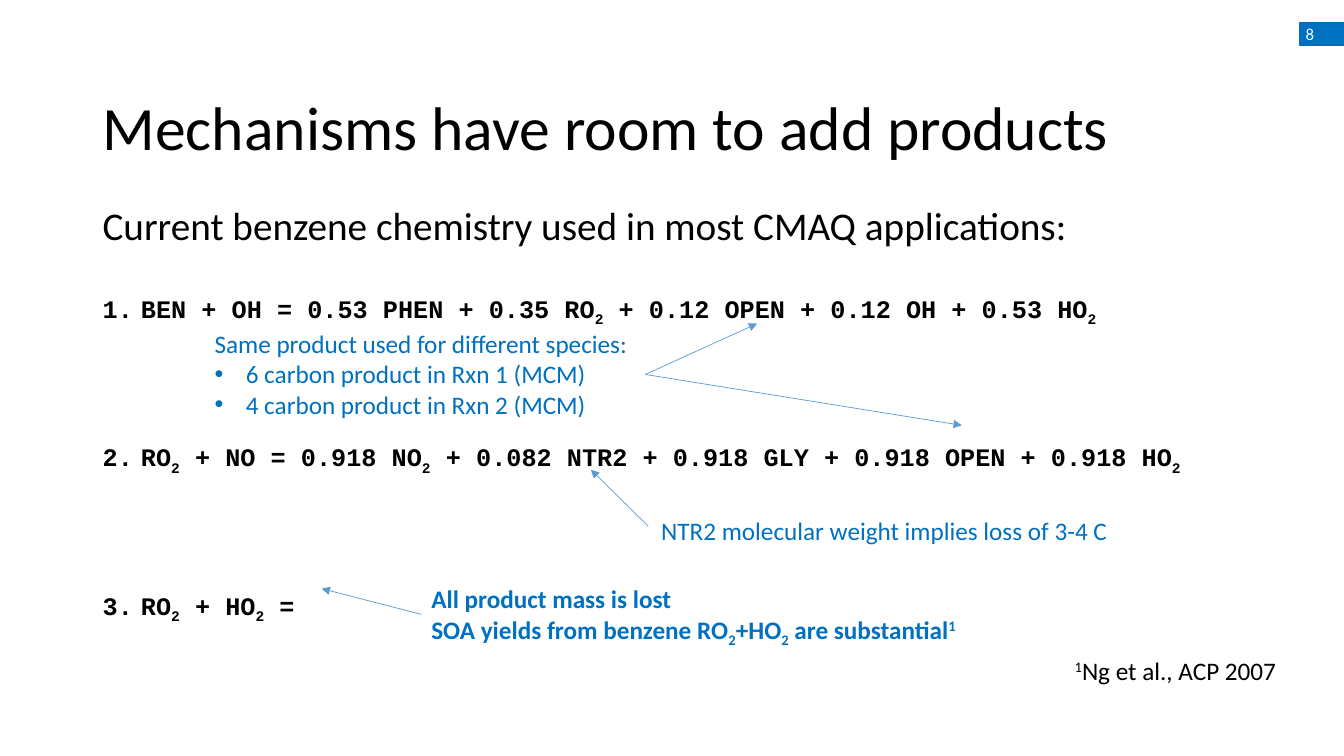
from dataclasses import dataclass

from lxml import etree
from pptx import Presentation
from pptx.dml.color import RGBColor
from pptx.enum.shapes import MSO_CONNECTOR, MSO_SHAPE
from pptx.enum.text import MSO_ANCHOR
from pptx.oxml.ns import qn
from pptx.util import Inches, Pt

RECTANGLE = MSO_SHAPE.RECTANGLE
STRAIGHT = MSO_CONNECTOR.STRAIGHT
TOP, MIDDLE = MSO_ANCHOR.TOP, MSO_ANCHOR.MIDDLE
LEFT_SIDE, RIGHT_SIDE = 1, 3
BLANK_LAYOUT = 6
BASELINES = {"_": "-25000", "^": "30000"}


@dataclass(frozen=True)
class Theme:
    """Fonts, type sizes and colours of the slide."""
    text_font: str = "Calibri"
    code_font: str = "Courier New"
    title_size: int = 44
    heading_size: int = 28
    text_size: int = 18
    number_size: int = 12
    black: RGBColor = RGBColor(0, 0, 0)
    white: RGBColor = RGBColor(255, 255, 255)
    blue: RGBColor = RGBColor(0x00, 0x70, 0xC0)
    arrow: RGBColor = RGBColor(0x5B, 0x9B, 0xD5)


THEME = Theme()
REACTIONS = (
    "BEN + OH = 0.53 PHEN + 0.35 RO|_2| + 0.12 OPEN + 0.12 OH + 0.53 HO|_2",
    "RO|_2| + NO = 0.918 NO|_2| + 0.082 NTR2 + 0.918 GLY + 0.918 OPEN + 0.918 HO|_2",
    "RO|_2| + HO|_2| =",
)


def write(paragraph, text, size=THEME.text_size, color=THEME.black,
          font=THEME.text_font, bold=False):
    """Write text split at bars, where _ marks a subscript and ^ a superscript."""
    for piece in text.split("|"):
        run = paragraph.add_run()
        baseline = BASELINES.get(piece[0])
        run.text = piece[1:] if baseline else piece
        run.font.name = font
        run.font.size = Pt(size)
        run.font.bold = bold
        run.font.color.rgb = color
        if baseline:
            run.font._element.set("baseline", baseline)


def add_marker(paragraph, tag, indent, **attributes):
    """Give a paragraph a hanging indent and a bullet or number."""
    properties = paragraph._p.get_or_add_pPr()
    properties.set("marL", str(Inches(indent)))
    properties.set("indent", str(-Inches(indent)))
    if tag == "a:buChar":
        etree.SubElement(properties, qn("a:buFont"), typeface="Arial")
    etree.SubElement(properties, qn(tag), **attributes)


def add_text_box(slide, box, anchor=TOP):
    """Add an empty wrapping text box at left, top, width, height."""
    shape = slide.shapes.add_textbox(*map(Inches, box))
    shape.text_frame.word_wrap = True
    shape.text_frame.vertical_anchor = anchor
    return shape


def add_page_number(slide, box, number):
    """Add the filled page number tag."""
    tag = slide.shapes.add_shape(RECTANGLE, *map(Inches, box))
    tag.shadow.inherit = False
    tag.fill.solid()
    tag.fill.fore_color.rgb = THEME.blue
    tag.line.color.rgb = THEME.blue
    tag.line.width = Pt(1)
    frame = tag.text_frame
    frame.margin_left = Inches(0.06)
    frame.margin_top = frame.margin_bottom = 0
    frame.vertical_anchor = MIDDLE
    paragraph = frame.paragraphs[0]
    paragraph.alignment = 1
    write(paragraph, number, THEME.number_size, THEME.white)


def add_title(slide, box, text):
    """Add the slide title."""
    paragraph = add_text_box(slide, box, MIDDLE).text_frame.paragraphs[0]
    paragraph.line_spacing = 0.9
    write(paragraph, text, THEME.title_size)


def add_reactions(slide, box, heading, reactions):
    """Add the heading and the numbered reactions, spaced to leave room for notes."""
    frame = add_text_box(slide, box).text_frame
    frame.paragraphs[0].line_spacing = 0.9
    write(frame.paragraphs[0], heading, THEME.heading_size)
    for index, reaction in enumerate(reactions):
        paragraph = frame.add_paragraph()
        paragraph.line_spacing = 0.9
        paragraph.space_before = Pt(84 if index else 32)
        add_marker(paragraph, "a:buAutoNum", 0.38, type="arabicPeriod")
        write(paragraph, reaction, font=THEME.code_font, bold=True)


def add_note(slide, box, lines, color=THEME.blue, bold=False, bullets=()):
    """Add a note of plain lines followed by bulleted lines."""
    shape = add_text_box(slide, box)
    frame = shape.text_frame
    for index, line in enumerate((*lines, *bullets)):
        paragraph = frame.add_paragraph() if index else frame.paragraphs[0]
        if index >= len(lines):
            add_marker(paragraph, "a:buChar", 0.31, char="•")
        write(paragraph, line, color=color, bold=bold)
    return shape


def add_arrow(slide, start, end, note=None, side=None):
    """Add a thin arrow, joined to a side of its note if one is given."""
    arrow = slide.shapes.add_connector(STRAIGHT, *map(Inches, (*start, *end)))
    if note is not None:
        arrow.begin_connect(note, side)
    arrow.line.color.rgb = THEME.arrow
    arrow.line.width = Pt(0.5)
    etree.SubElement(arrow.line._get_or_add_ln(), qn("a:tailEnd"), type="triangle")
    etree.SubElement(arrow._element.spPr, qn("a:effectLst"))


def add_annotations(slide):
    """Add the notes on the reactions with their arrows."""
    species = add_note(
        slide, (2.03, 3.21, 4.37, 1.01), ["Same product used for different species:"],
        bullets=["6 carbon product in Rxn 1 (MCM)", "4 carbon product in Rxn 2 (MCM)"])
    for target in ((7.51, 3.21), (9.54, 4.22)):
        add_arrow(slide, (6.4, 3.71), target, species, RIGHT_SIDE)
    add_note(slide, (6.46, 5.06, 4.93, 0.4), ["NTR2 molecular weight implies loss of 3-4 C"])
    add_arrow(slide, (6.43, 5.22), (5.86, 4.66))
    lost_mass = add_note(
        slide, (4.18, 5.74, 5.83, 0.71),
        ["All product mass is lost",
         "SOA yields from benzene RO|_2|+HO|_2| are substantial|^1"], bold=True)
    add_arrow(slide, (4.18, 6.09), (3.19, 5.84), lost_mass, LEFT_SIDE)


def main():
    """Build and save the slide."""
    presentation = Presentation()
    presentation.slide_width = Inches(13.33)
    presentation.slide_height = Inches(7.5)
    slide = presentation.slides.add_slide(presentation.slide_layouts[BLANK_LAYOUT])
    add_page_number(slide, (12.89, 0.23, 0.48, 0.22), "8")
    add_title(slide, (0.92, 0.74, 11.5, 1.11), "Mechanisms have room to add products")
    add_reactions(slide, (0.92, 2, 11.5, 4.76),
                  "Current benzene chemistry used in most CMAQ applications:", REACTIONS)
    add_annotations(slide)
    add_note(slide, (10.56, 6.45, 2.4, 0.4), ["^1|Ng et al., ACP 2007"], THEME.black)
    presentation.save("out.pptx")


if __name__ == "__main__":
    main()
